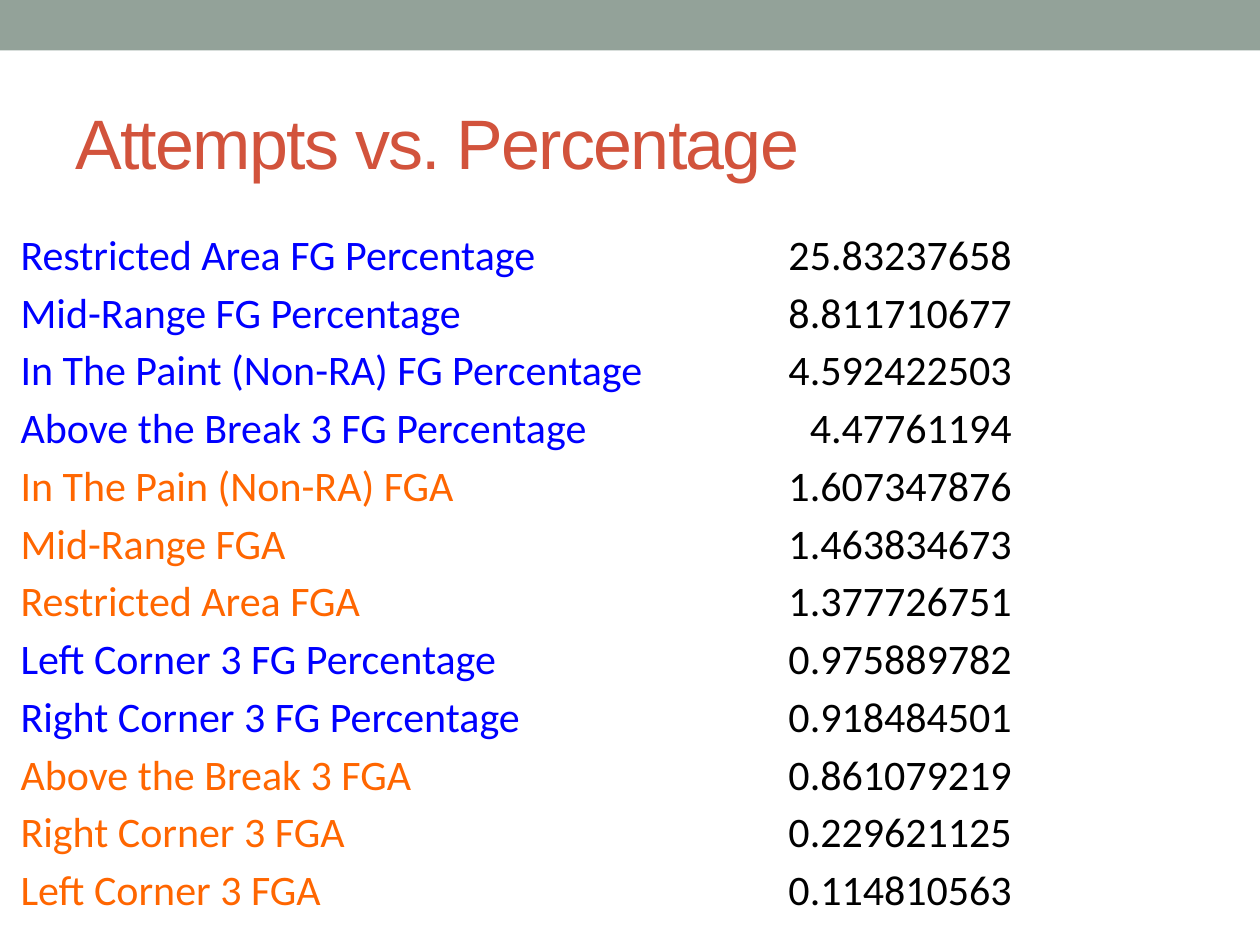
from dataclasses import dataclass

from pptx import Presentation
from pptx.dml.color import RGBColor
from pptx.enum import shapes, text
from pptx.util import Pt


@dataclass(frozen=True)
class Theme:
    band: str = "93A299"
    title: str = "D2533C"
    rate: str = "0000FF"
    shots: str = "FF6600"
    value: str = "000000"
    head: str = "Arial"
    body: str = "Calibri"
    big: int = 40
    small: int = 24


THEME = Theme()

ROWS = [
    ("Restricted Area FG Percentage", "25.83237658"),
    ("Mid-Range FG Percentage", "8.811710677"),
    ("In The Paint (Non-RA) FG Percentage", "4.592422503"),
    ("Above the Break 3 FG Percentage", "4.47761194"),
    ("In The Pain (Non-RA) FGA", "1.607347876"),
    ("Mid-Range FGA", "1.463834673"),
    ("Restricted Area FGA", "1.377726751"),
    ("Left Corner 3 FG Percentage", "0.975889782"),
    ("Right Corner 3 FG Percentage", "0.918484501"),
    ("Above the Break 3 FGA", "0.861079219"),
    ("Right Corner 3 FGA", "0.229621125"),
    ("Left Corner 3 FGA", "0.114810563"),
]


def assign(item, values):
    for name, value in values.items():
        setattr(item, name, value)


def write(para, words, face, size, color, align=text.PP_ALIGN.LEFT):
    para.alignment = align
    run = para.add_run()
    run.text = words
    assign(run.font, {"name": face, "size": Pt(size), "bold": False})
    run.font.color.rgb = RGBColor.from_string(color)
    return run


def add_band(slide, box):
    band = slide.shapes.add_shape(shapes.MSO_SHAPE.RECTANGLE, *map(Pt, box))
    band.shadow.inherit = False
    band.fill.solid()
    band.fill.fore_color.rgb = RGBColor.from_string(THEME.band)
    band.line.fill.background()


def add_title(slide, box, words):
    frame = slide.shapes.add_textbox(*map(Pt, box)).text_frame
    assign(frame, {"word_wrap": True,
                   "vertical_anchor": text.MSO_ANCHOR.MIDDLE})
    run = write(frame.paragraphs[0], words, THEME.head, THEME.big, THEME.title)
    # Tighten the letters by one point
    run.font._element.set("spc", "-100")


def add_stats(slide, box, rows, split):
    left, top, width, height = box
    table = slide.shapes.add_table(len(rows), 2, *map(Pt, box)).table
    assign(table, {"first_row": False, "horz_banding": False})
    for col, part in zip(table.columns, (split, width - split)):
        col.width = Pt(part)
    for row in table.rows:
        row.height = Pt(height / len(rows))

    form = {"margin_left": Pt(0.75), "margin_right": Pt(0.75),
            "margin_top": Pt(0.75), "margin_bottom": 0,
            "vertical_anchor": text.MSO_ANCHOR.BOTTOM}
    for row, (label, value) in zip(table.rows, rows):
        # Attempts and percentages differ in colour
        tint = THEME.shots if label.endswith("FGA") else THEME.rate
        parts = ((label, tint, text.PP_ALIGN.LEFT),
                 (value, THEME.value, text.PP_ALIGN.RIGHT))
        for cell, (words, color, align) in zip(row.cells, parts):
            assign(cell, form)
            cell.fill.background()
            write(cell.text_frame.paragraphs[0], words,
                  THEME.body, THEME.small, color, align)


def main():
    deck = Presentation()
    assign(deck, {"slide_width": Pt(720), "slide_height": Pt(540)})
    slide = deck.slides.add_slide(deck.slide_layouts[6])
    add_band(slide, (0, 0, 720, 28.8))
    add_title(slide, (36, 42, 648, 78), "Attempts vs. Percentage")
    add_stats(slide, (11, 128, 568, 396), ROWS, 424.5)
    deck.save("out.pptx")


if __name__ == "__main__":
    main()
